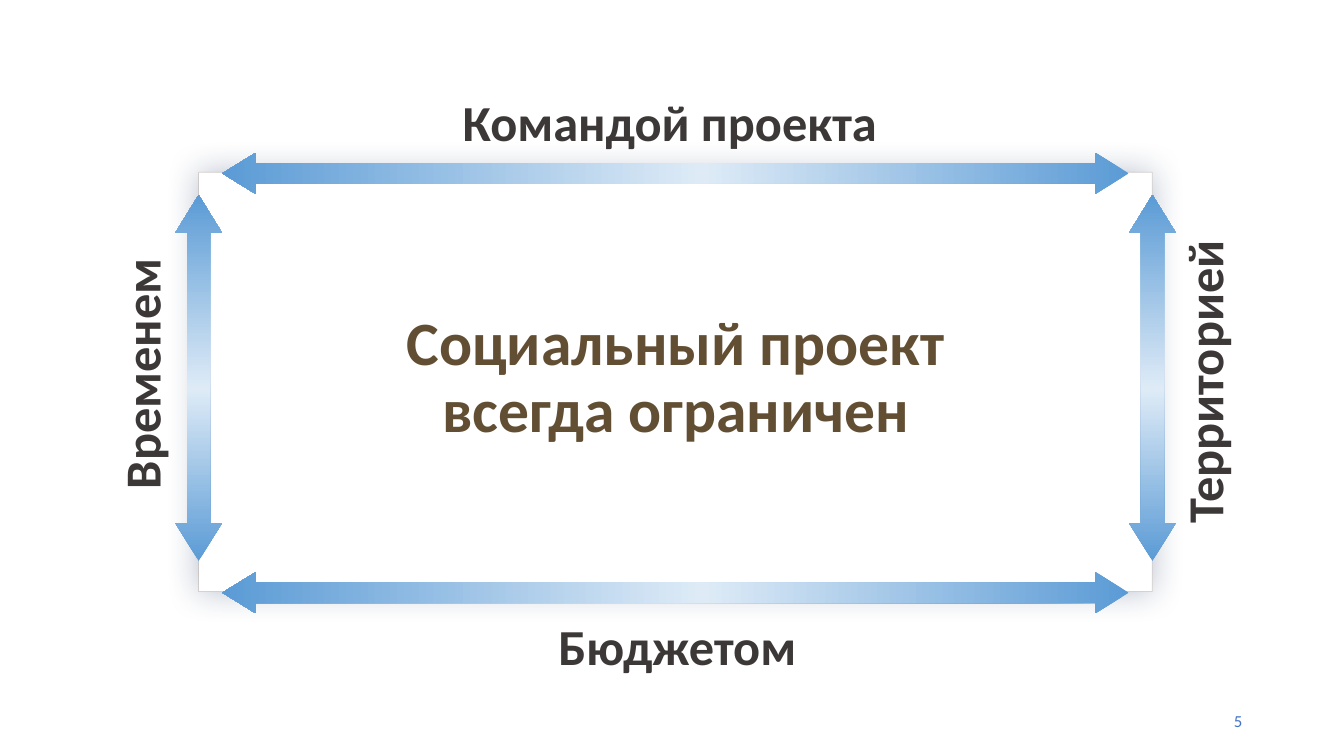
import copy

import lxml.etree
import pptx
import pptx.dml.color
import pptx.enum.shapes
import pptx.enum.text
import pptx.oxml
import pptx.oxml.ns
import pptx.util

Inches = pptx.util.Inches
Pt = pptx.util.Pt
RGB = pptx.dml.color.RGBColor
Shape = pptx.enum.shapes.MSO_SHAPE
Align = pptx.enum.text.PP_ALIGN
Anchor = pptx.enum.text.MSO_ANCHOR
qn = pptx.oxml.ns.qn

FONT = "Calibri"
WHITE = RGB(0xFF, 0xFF, 0xFF)
BLUE = RGB(0x5B, 0x9B, 0xD5)
PALE = RGB(0xDE, 0xEB, 0xF7)
EDGE = RGB(0x42, 0x1E, 0x06)
DARK = RGB(0x3C, 0x38, 0x37)
BROWN = RGB(0x62, 0x4E, 0x33)
ACCENT = RGB(0x44, 0x72, 0xC4)
GLOW = RGB(0x20, 0x38, 0x64)


def add_text(slide, box, lines, size, color, bold=True, align=Align.CENTER,
             anchor=Anchor.TOP, turn=0, space=None):
    """Place text in box (left, top, width, height); lines share a paragraph."""
    shape = slide.shapes.add_textbox(*map(Inches, box))
    shape.rotation = turn
    frame = shape.text_frame
    frame.word_wrap = True
    frame.vertical_anchor = anchor
    para = frame.paragraphs[0]
    para.alignment = align
    if space:
        para.line_spacing = space
    for i, line in enumerate(lines):
        if i:
            para.add_line_break()
        run = para.add_run()
        run.text = line
        font = run.font
        font.name, font.size, font.bold = FONT, Pt(size), bold
        font.color.rgb = color


def add_panel(slide, box):
    """White panel with a faint outline and a soft glow."""
    panel = slide.shapes.add_shape(Shape.RECTANGLE, *map(Inches, box))
    panel.shadow.inherit = False
    panel.fill.solid()
    panel.fill.fore_color.rgb = WHITE
    panel.line.color.rgb = EDGE
    panel.line.width = Pt(0.5)
    props = panel.element.spPr
    tint = props.find(qn("a:ln")).find(".//" + qn("a:srgbClr"))
    lxml.etree.SubElement(tint, qn("a:alpha"), val="17000")
    shade = lxml.etree.SubElement(
        props.find(qn("a:effectLst")), qn("a:outerShdw"),
        blurRad=str(Pt(24)), dist="0", dir="0", algn="ctr", rotWithShape="0")
    tint = lxml.etree.SubElement(shade, qn("a:srgbClr"), val=str(GLOW))
    lxml.etree.SubElement(tint, qn("a:alpha"), val="33000")


def add_arrow(slide, mid_x, mid_y, length, thick, turn=0):
    """Two-headed arrow centred on a point, pale in the middle."""
    box = (mid_x - length / 2, mid_y - thick / 2, length, thick)
    arrow = slide.shapes.add_shape(Shape.LEFT_RIGHT_ARROW, *map(Inches, box))
    arrow.rotation = turn
    arrow.shadow.inherit = False
    arrow.adjustments[0] = 0.5
    arrow.adjustments[1] = 0.81
    arrow.line.fill.background()
    arrow.fill.gradient()
    arrow.fill.gradient_angle = 180
    # A third stop joins the two default ones
    stops = arrow.element.spPr.find(qn("a:gradFill")).find(qn("a:gsLst"))
    stops.insert(1, copy.deepcopy(stops[0]))
    ramp = ((0, BLUE), (0.47, PALE), (1, BLUE))
    for stop, (pos, color) in zip(arrow.fill.gradient_stops, ramp):
        stop.position = pos
        stop.color.rgb = color


def add_limits(slide, box):
    """Panel whose four sides carry an arrow and a label each."""
    left, top, width, height = box
    right, base = left + width, top + height
    mid_x, mid_y = left + width / 2, top + height / 2 - 0.04
    add_panel(slide, box)

    # Labels
    add_text(slide, (mid_x - 2.21, top - 0.86, 4.62, 0.68),
             ["Командой проекта"], 36, DARK, align=Align.LEFT)
    add_text(slide, (mid_x - 1.26, base + 0.18, 2.74, 0.68),
             ["Бюджетом"], 36, DARK, align=Align.LEFT)
    for word, x, y, wide in (("Временем", left - 0.55, mid_y - 0.04, 2.86),
                             ("Территорией", right + 0.53, mid_y + 0.04, 5.35)):
        add_text(slide, (x - wide / 2, y - 0.375, wide, 0.75),
                 [word], 36, DARK, turn=270)

    # Arrows along the sides
    for y in (top, base):
        add_arrow(slide, mid_x, y + 0.01, width - 0.47, 0.41)
    for x in (left, right):
        add_arrow(slide, x, mid_y, height - 0.53, 0.46, turn=90)

    # Statement in the middle
    add_text(slide, (mid_x - 5.16, top + 1.34, 10.33, 0.85),
             ["Социальный проект", "всегда ограничен"], 44, BROWN, space=0.9)


def add_number(slide, box):
    """Page number at the lower right."""
    add_text(slide, box, ["5"], 12, ACCENT, bold=False,
             align=Align.RIGHT, anchor=Anchor.MIDDLE)


def main():
    deck = pptx.Presentation()
    deck.slide_width, deck.slide_height = Inches(13.33), Inches(7.5)
    slide = deck.slides.add_slide(deck.slide_layouts[6])
    add_number(slide, (9.42, 6.95, 3, 0.4))
    add_limits(slide, (1.97, 1.71, 9.46, 4.16))
    deck.save("out.pptx")


if __name__ == "__main__":
    main()
